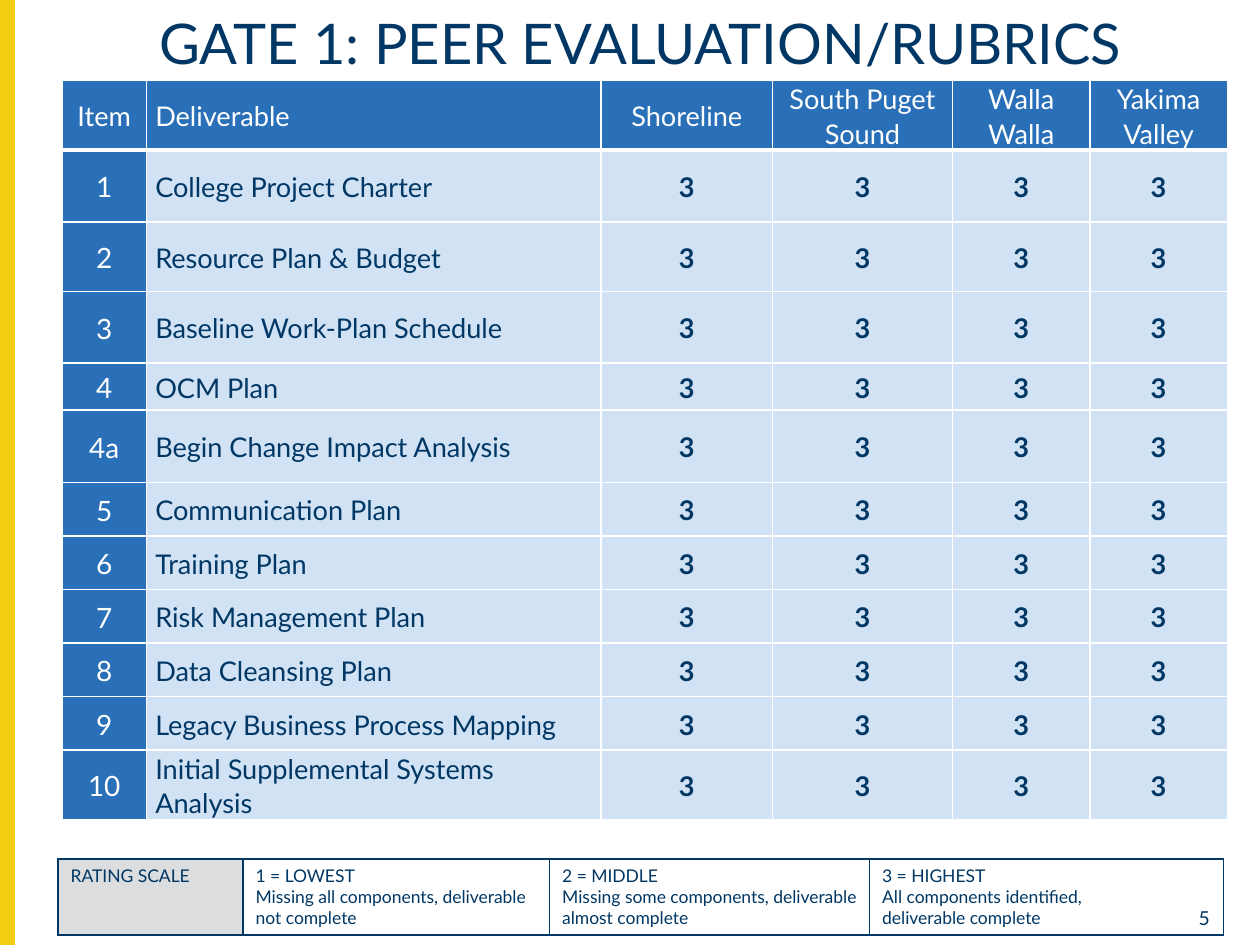
from lxml.etree import SubElement
from pptx import Presentation
from pptx.dml.color import RGBColor
from pptx.enum.shapes import MSO_SHAPE
from pptx.enum.text import MSO_ANCHOR as Anchor, PP_ALIGN as Align
from pptx.oxml.ns import qn
from pptx.util import Cm, Pt

NAVY, BLUE, PALE = "003764", "2A70B8", "D1E2F4"
WHITE, YELLOW, GREY = "FFFFFF", "F4CE12", "DBDDDE"

COLLEGES = ["Shoreline", "South Puget Sound", "Walla Walla", "Yakima Valley"]
DELIVERABLES = [
    ("1", "College Project Charter", 1.45),
    ("2", "Resource Plan & Budget", 1.4),
    ("3", "Baseline Work-Plan Schedule", 1.45),
    ("4", "OCM Plan", 0.94),
    ("4a", "Begin Change Impact Analysis", 1.46),
    ("5", "Communication Plan", 1.08),
    ("6", "Training Plan", 1.08),
    ("7", "Risk Management Plan", 1.08),
    ("8", "Data Cleansing Plan", 1.08),
    ("9", "Legacy Business Process Mapping", 1.08),
    ("10", "Initial Supplemental Systems Analysis", 1.39),
]
SCORE = "3"
RATINGS = [
    ["RATING SCALE"],
    ["1 = LOWEST", "Missing all components, deliverable not complete"],
    ["2 = MIDDLE", "Missing some components, deliverable almost complete"],
    ["3 = HIGHEST", "All components identified,", "deliverable complete"],
]


def rgb(value):
    return RGBColor.from_string(value)


def write(frame, lines, size, color=NAVY, bold=False, align=Align.LEFT, spacing=None):
    """Put one paragraph per line into a text frame."""
    frame.word_wrap = True
    for index, line in enumerate(lines):
        paragraph = frame.paragraphs[0] if index == 0 else frame.add_paragraph()
        paragraph.alignment = align
        paragraph.line_spacing = spacing
        run = paragraph.add_run()
        run.text = line
        font = run.font
        font.name, font.size, font.bold = "Lato", Pt(size), bold
        font.color.rgb = rgb(color)


def add_text(slide, box, text, size, align, spacing=None):
    frame = slide.shapes.add_textbox(*map(Cm, box)).text_frame
    frame.vertical_anchor = Anchor.TOP
    write(frame, [text], size, align=align, spacing=spacing)


def add_side_bar(slide, height):
    bar = slide.shapes.add_shape(MSO_SHAPE.RECTANGLE, 0, 0, Cm(0.28), height)
    bar.shadow.inherit = False
    bar.fill.solid()
    bar.fill.fore_color.rgb = rgb(YELLOW)
    bar.line.color.rgb = rgb(YELLOW)
    bar.line.width = Pt(1)


def add_grid(slide, left, top, widths, heights):
    table = slide.shapes.add_table(
        len(heights), len(widths), Cm(left), Cm(top), Cm(sum(widths)), Cm(sum(heights))
    ).table
    table.horz_banding = False
    for column, width in zip(table.columns, widths):
        column.width = Cm(width)
    for row, height in zip(table.rows, heights):
        row.height = Cm(height)
    return table


def style_cell(cell, border, fill=None, top=1, bottom=1):
    """Border widths are in points; no fill leaves the cell clear."""
    properties = cell._tc.get_or_add_tcPr()
    for side, width in (("L", 1), ("R", 1), ("T", top), ("B", bottom)):
        line = SubElement(properties, qn(f"a:ln{side}"), w=str(Pt(width)))
        SubElement(SubElement(line, qn("a:solidFill")), qn("a:srgbClr"), val=border)
    if fill:
        cell.fill.solid()
        cell.fill.fore_color.rgb = rgb(fill)
    else:
        cell.fill.background()


def add_rubric(slide):
    widths = [1.7, 9.17, 3.45, 3.63, 2.77, 2.77]
    heights = [1.37] + [height for _, _, height in DELIVERABLES]
    rows = [["Item", "Deliverable"] + COLLEGES]
    rows += [[item, name] + [SCORE] * len(COLLEGES) for item, name, _ in DELIVERABLES]
    table = add_grid(slide, 1.25, 1.62, widths, heights)
    for r, texts in enumerate(rows):
        for c, text in enumerate(texts):
            cell = table.cell(r, c)
            heading = r == 0 or c == 0
            style_cell(cell, WHITE, BLUE if heading else PALE,
                       top=3 if r == 1 else 1, bottom=3 if r == 0 else 1)
            cell.vertical_anchor = Anchor.MIDDLE
            cell.margin_left = cell.margin_right = Cm(0.18)
            cell.margin_top = cell.margin_bottom = 0
            write(cell.text_frame, [text],
                  size=16 if r > 0 and c == 0 else 15.5,
                  color=WHITE if heading else NAVY,
                  bold=r > 0 and c > 1,
                  align=Align.LEFT if c == 1 else Align.CENTER,
                  spacing=1.07)


def add_rating_scale(slide):
    table = add_grid(slide, 1.17, 17.32, [3.73, 6.18, 6.45, 7.13], [1.52])
    for c, lines in enumerate(RATINGS):
        cell = table.cell(0, c)
        style_cell(cell, NAVY, GREY if c == 0 else None)
        write(cell.text_frame, lines, size=10)


def main():
    deck = Presentation()
    deck.slide_width, deck.slide_height = Cm(25.4), Cm(19.05)
    slide = deck.slides.add_slide(deck.slide_layouts[6])
    add_side_bar(slide, deck.slide_height)
    add_text(slide, (23.37, 18.14, 1.27, 0.53), "5", 11, Align.RIGHT)
    add_text(slide, (0.66, 0.2, 24.51, 1.42),
             "GATE 1: PEER EVALUATION/RUBRICS", 32, Align.CENTER, 0.9)
    add_rubric(slide)
    add_rating_scale(slide)
    deck.save("out.pptx")


if __name__ == "__main__":
    main()
